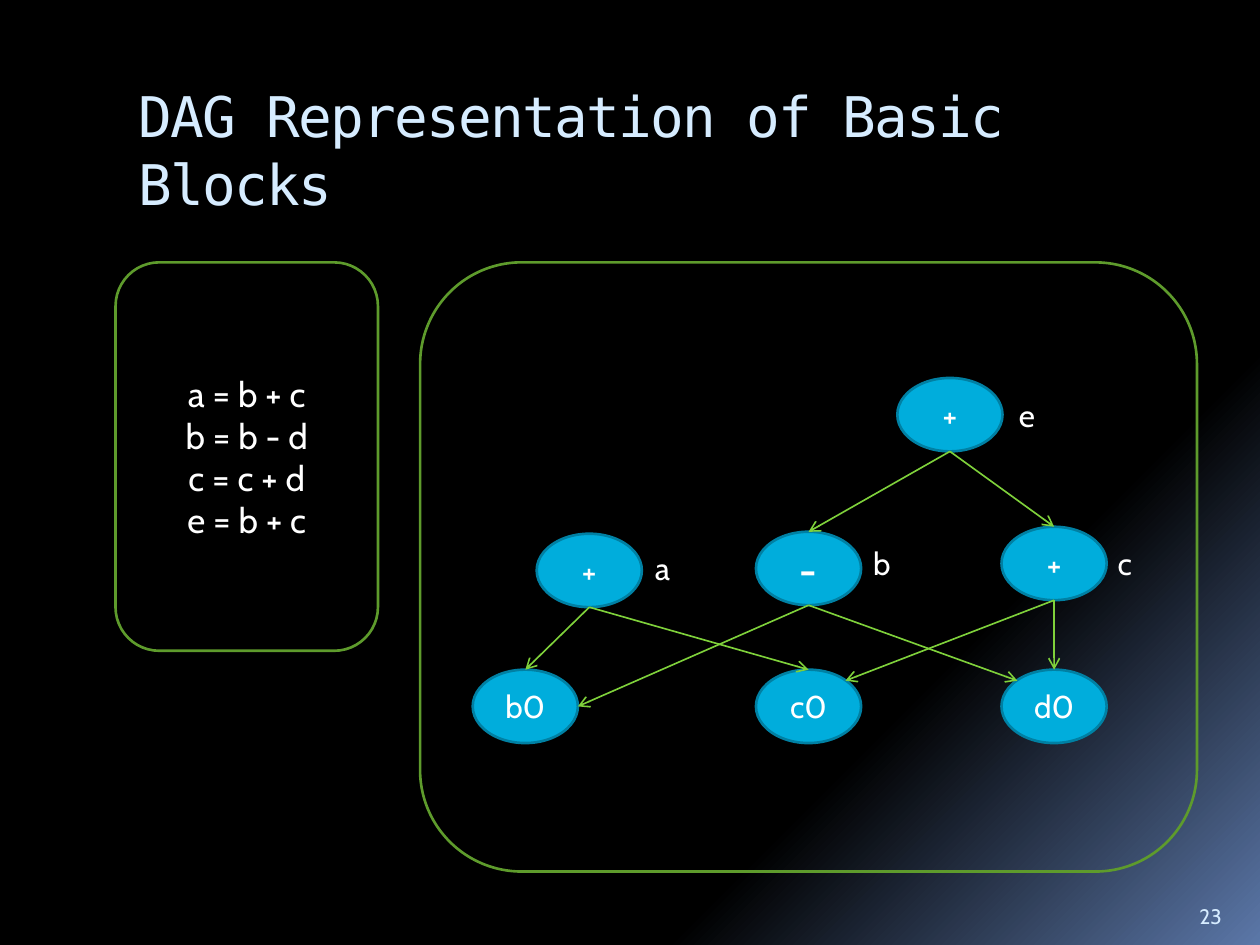
import pptx
import pptx.util
import pptx.dml.color
import pptx.enum.shapes
import pptx.enum.text
from lxml import etree
from pptx.oxml.ns import qn

Cm = pptx.util.Cm
Pt = pptx.util.Pt
Shape = pptx.enum.shapes.MSO_SHAPE
Anchor = pptx.enum.text.MSO_ANCHOR
Align = pptx.enum.text.PP_ALIGN

WHITE, PALE, BLACK, BLUE = "FFFFFF", "D6ECFF", "000000", "5B77A8"
CYAN, TEAL, GREEN, LIME = "00ADDC", "0080A3", "5E9B2C", "7FD13B"
NODE_W, NODE_H = 2.12, 1.48

# Points on a node, as shares of its width and height
PORTS = {"top": (0.5, 0), "bottom": (0.5, 1), "right": (1, 0.5),
         "top left": (0.15, 0.15), "top right": (0.85, 0.15)}


def color(code):
    return pptx.dml.color.RGBColor.from_string(code)


class Deck:
    def __init__(self):
        self.prs = pptx.Presentation()
        self.prs.slide_width, self.prs.slide_height = Cm(25.4), Cm(19.05)
        self.slide = self.prs.slides.add_slide(self.prs.slide_layouts[6])
        self.font = "Cabin"

    def backdrop(self, stops, angle):
        fill = self.slide.background.fill
        fill.gradient()
        fill.gradient_angle = angle
        for stop, (place, code) in zip(fill.gradient_stops, stops):
            stop.position = place
            stop.color.rgb = color(code)

    def put(self, frame, lines, size, code=WHITE, align=Align.LEFT,
            font=None, bold=False, gap=0):
        for i, line in enumerate(lines):
            para = frame.paragraphs[0] if i == 0 else frame.add_paragraph()
            para.alignment = align
            run = para.add_run()
            run.text = line
            run.font.size = Pt(size)
            run.font.name = font or self.font
            run.font.bold = bold
            run.font.color.rgb = color(code)
            if gap:
                run._r.get_or_add_rPr().set("spc", str(gap * 100))

    def text(self, box, line, size, anchor=Anchor.TOP, wrap=True, **style):
        frame = self.slide.shapes.add_textbox(*map(Cm, box)).text_frame
        frame.word_wrap = wrap
        frame.vertical_anchor = anchor
        self.put(frame, [line], size, **style)
        return frame

    def shape(self, kind, box, line, fill=None, lines=(), size=18, bold=False):
        item = self.slide.shapes.add_shape(kind, *map(Cm, box))
        item.shadow.inherit = False
        if fill:
            item.fill.solid()
            item.fill.fore_color.rgb = color(fill)
        else:
            item.fill.background()
        item.line.color.rgb = color(line)
        item.line.width = Pt(1.5)
        item.text_frame.vertical_anchor = Anchor.MIDDLE
        self.put(item.text_frame, lines, size, align=Align.CENTER, bold=bold)

    def arrow(self, start, end):
        link = self.slide.shapes.add_connector(
            pptx.enum.shapes.MSO_CONNECTOR.STRAIGHT, *map(Cm, start + end))
        link.line.color.rgb = color(LIME)
        link.line.width = Pt(0.94)
        props = link._element.spPr
        etree.SubElement(props.find(qn("a:ln")), qn("a:tailEnd"), type="arrow")
        etree.SubElement(props, qn("a:effectLst"))


def main():
    deck = Deck()
    deck.backdrop([(0.73, BLACK), (1, BLUE)], 315)

    # Title and page number
    title = deck.text((2.54, 1.42, 21.59, 2.54), "DAG Representation of Basic Blocks",
                      32, code=PALE, font="DejaVu Sans Mono", gap=-1)
    title.margin_top = Cm(0.23)
    deck.text((23.93, 17.83, 1.27, 1.02), "23", 12, anchor=Anchor.BOTTOM, code=PALE)

    # Code block and graph frame
    code = ["a = b + c", "b = b - d", "c = c + d", "e = b + c"]
    deck.shape(Shape.ROUNDED_RECTANGLE, (2.33, 5.29, 5.29, 7.83), GREEN,
               lines=code, size=20)
    deck.shape(Shape.ROUNDED_RECTANGLE, (8.47, 5.29, 15.66, 12.28), GREEN)

    # Nodes: left, top, sign
    nodes = {
        "b0": (9.53, 13.5, "b0"), "c0": (15.24, 13.5, "c0"), "d0": (20.19, 13.5, "d0"),
        "a": (10.82, 10.76, "+"), "b": (15.24, 10.72, "-"), "c": (20.19, 10.62, "+"),
        "e": (18.09, 7.62, "+"),
    }
    for left, top, sign in nodes.values():
        minus = sign == "-"
        deck.shape(Shape.OVAL, (left, top, NODE_W, NODE_H), TEAL, CYAN, [sign],
                   size=24 if minus else 18, bold=minus)

    # Names beside the nodes
    names = [("a", 12.95, 10.95), ("b", 17.35, 10.85),
             ("c", 22.28, 10.85), ("e", 20.29, 7.85)]
    for name, left, top in names:
        deck.text((left, top, 0.84, 1.02), name, 18, wrap=False)

    # Edges, each from the bottom of its parent
    def port(name, side):
        left, top, _ = nodes[name]
        x, y = PORTS[side]
        return left + x * NODE_W, top + y * NODE_H

    edges = [("a", "b0", "top"), ("a", "c0", "top"),
             ("b", "b0", "right"), ("b", "d0", "top left"),
             ("c", "c0", "top right"), ("c", "d0", "top"),
             ("e", "b", "top"), ("e", "c", "top")]
    for parent, child, side in edges:
        deck.arrow(port(parent, "bottom"), port(child, side))

    deck.prs.save("out.pptx")


if __name__ == "__main__":
    main()
